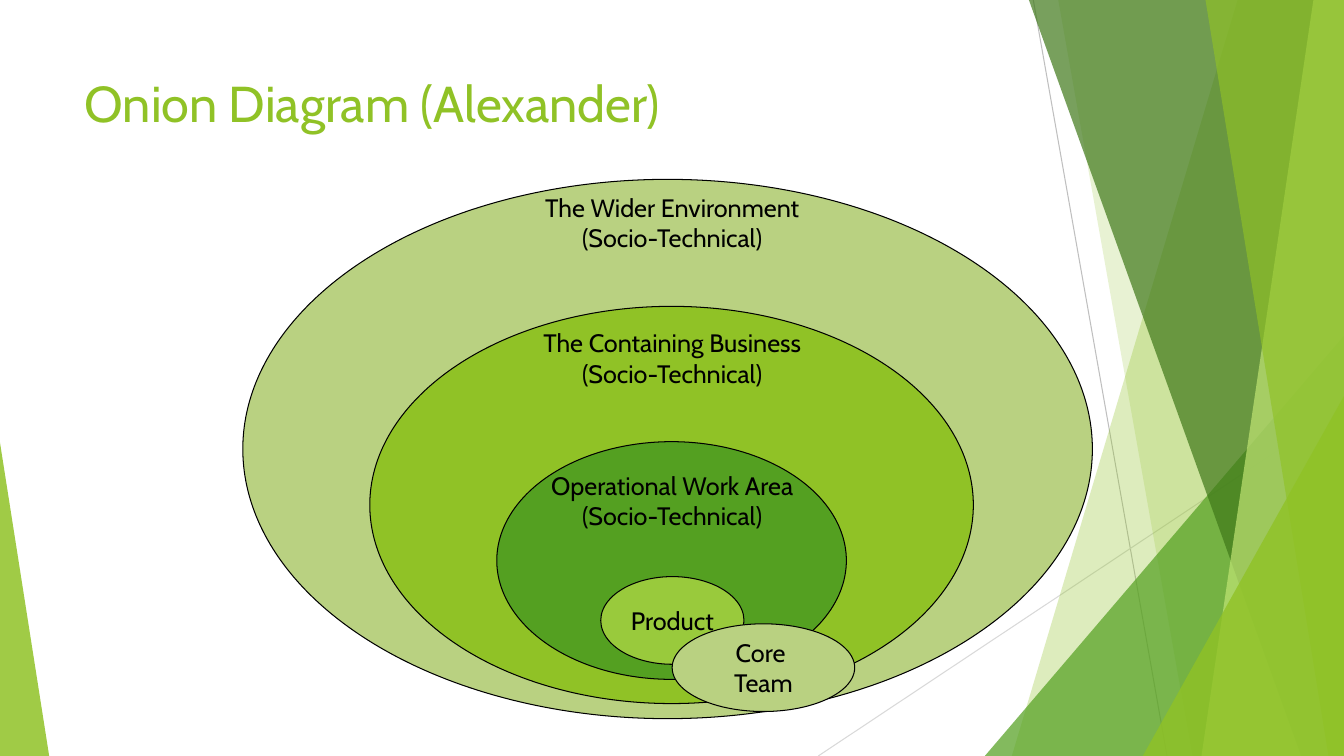
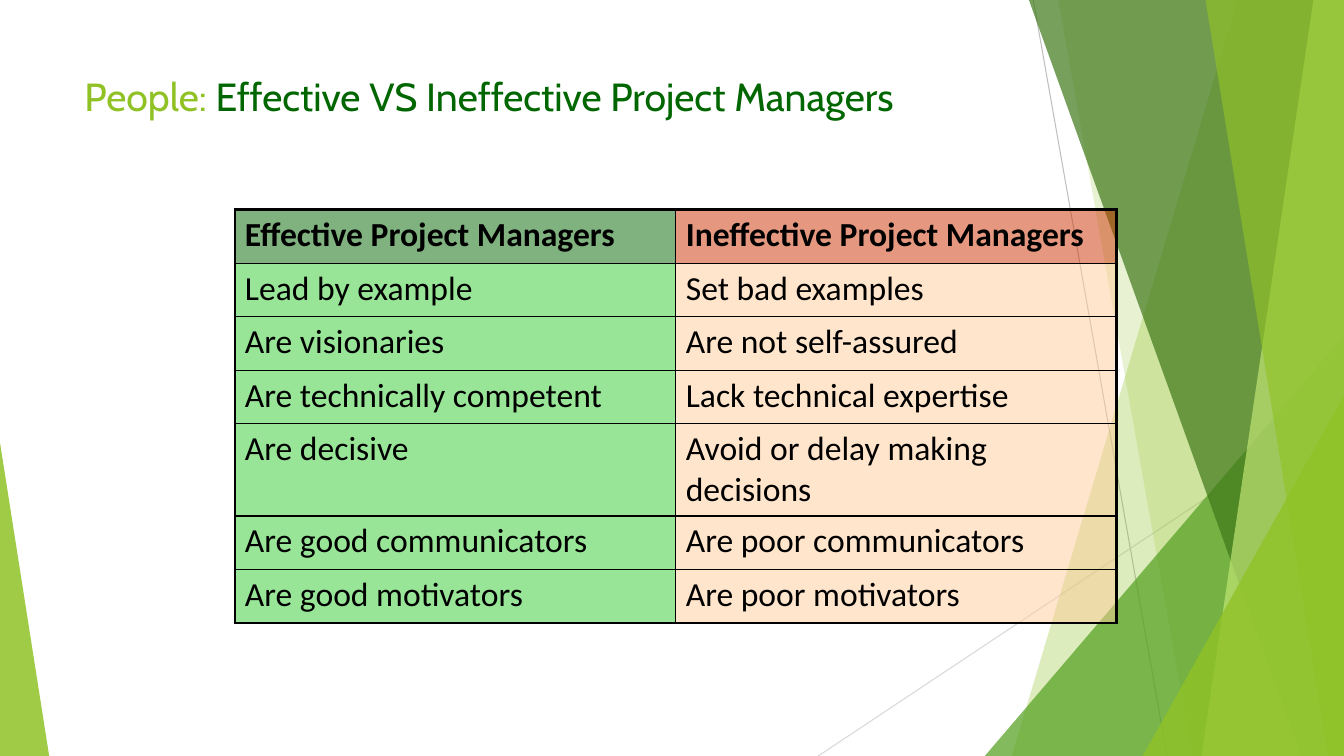
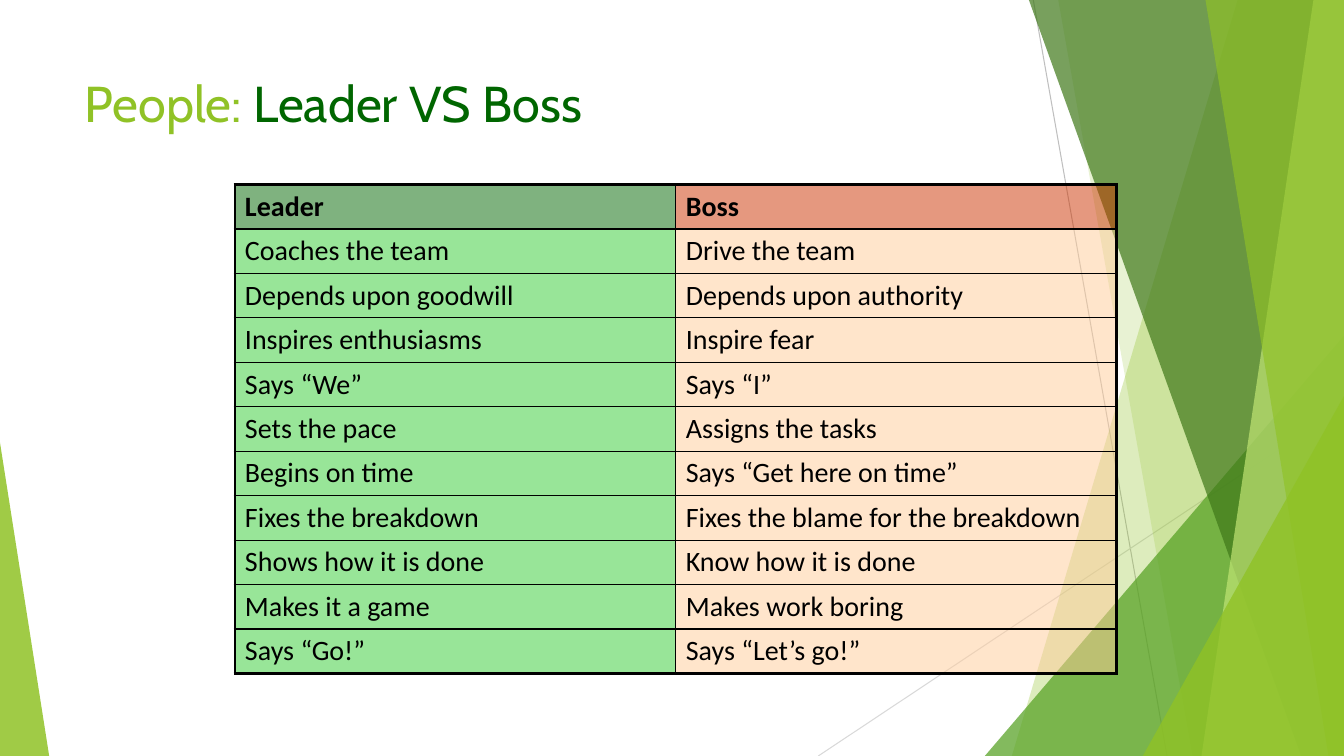
"""Build three slides on project stakeholders and people management."""
from lxml.etree import SubElement
from pptx import Presentation
from pptx.dml.color import RGBColor
from pptx.enum.shapes import MSO_CONNECTOR, MSO_SHAPE
from pptx.enum.text import MSO_ANCHOR, PP_ALIGN
from pptx.oxml.ns import qn
from pptx.util import Cm, Pt

BLACK = RGBColor(0x00, 0x00, 0x00)
LIME = RGBColor(0x90, 0xC2, 0x26)
GREEN = RGBColor(0x54, 0xA0, 0x21)
FOREST = RGBColor(0x3F, 0x78, 0x19)
PALE_LIME = RGBColor(0xC0, 0xE4, 0x74)
SAGE = RGBColor(0xB9, 0xD1, 0x81)
LEAF = RGBColor(0x99, 0xCA, 0x3C)
DARK_GREEN = RGBColor(0x00, 0x66, 0x00)
BRIGHT_GREEN = RGBColor(0x33, 0xCC, 0x33)
RUST = RGBColor(0xCC, 0x33, 0x00)
PEACH = RGBColor(0xFF, 0xCC, 0x99)
GREY = RGBColor(0xBF, 0xBF, 0xBF)
LIGHT_GREY = RGBColor(0xD9, 0xD9, 0xD9)

HEADING_FONT = "Cabin"
TABLE_FONT = "Calibri"
WIDTH, HEIGHT = 33.87, 19.05

BACKDROP_LINES = [
    ((26.04, 0), (29.41, HEIGHT), GREY),
    ((WIDTH, 10.24), (20.62, HEIGHT), LIGHT_GREY),
]
BACKDROP_PARTS = [
    ("band", (31.19, 25.5), LIME, 30),
    ("band", (26.67, 30.05), LIME, 20),
    ("triangle", (24.82, 8.46, 9.05, 1), GREEN, 72),
    ("band", (25.93, 32.79), FOREST, 70),
    ("band", (33.1, 30.28), PALE_LIME, 70),
    ("band", (30.38, 33.48), LIME, 65),
    ("triangle", (28.8, 9.98, 5.07, 1), LIME, 80),
    ("triangle", (0, 11.15, 1.24, 0), LIME, 85),
]

ONION_TITLE = [("Onion Diagram (Alexander)", LIME)]
ONION_LAYERS = [
    ((6.12, 4.52, 21.41, 13.59), SAGE, ""),
    ((9.32, 7.72, 15.21, 10.01), LIME, ""),
    ((12.52, 11.13, 8.81, 5.99), GREEN, ""),
    ((15.14, 14.53, 3.61, 2.21), LEAF, "Product"),
    ((16.94, 15.72, 4.6, 2.21), SAGE, "Core \nTeam"),
]
ONION_LABELS = [
    (11.73, "Operational Work Area\n(Socio-Technical)"),
    (8.13, "The Containing Business\n(Socio-Technical)"),
    (4.72, "The Wider Environment\n(Socio-Technical)"),
]
ONION_CENTRE, LABEL_WIDTH, LABEL_HEIGHT = 16.94, 7.6, 1.78

COMPARISONS = [
    {
        "title": [("People: ", LIME), ("Effective VS Ineffective Project Managers", DARK_GREEN)],
        "title_size": 28,
        "top": 5.28,
        "text_size": 24,
        "heights": [1.35] * 4 + [2.32] + [1.35] * 2,
        "rows": [
            ("Effective Project Managers", "Ineffective Project Managers"),
            ("Lead by example", "Set bad examples"),
            ("Are visionaries", "Are not self-assured"),
            ("Are technically competent", "Lack technical expertise"),
            ("Are decisive", "Avoid or delay making decisions"),
            ("Are good communicators", "Are poor communicators"),
            ("Are good motivators", "Are poor motivators"),
        ],
    },
    {
        "title": [("People: ", LIME), ("Leader VS Boss", DARK_GREEN)],
        "title_size": 36,
        "top": 4.65,
        "text_size": 20,
        "heights": [1.12] * 11,
        "rows": [
            ("Leader", "Boss"),
            ("Coaches the team", "Drive the team"),
            ("Depends upon goodwill", "Depends upon authority"),
            ("Inspires enthusiasms", "Inspire fear"),
            ("Says “We”", "Says “I”"),
            ("Sets the pace", "Assigns the tasks"),
            ("Begins on time", "Says “Get here on time”"),
            ("Fixes the breakdown", "Fixes the blame for the breakdown"),
            ("Shows how it is done", "Know how it is done"),
            ("Makes it a game", "Makes work boring"),
            ("Says “Go!”", "Says “Let’s go!”"),
        ],
    },
]
TABLE_LEFT, COLUMN_WIDTH = 5.92, 11.11
HEADER_FILLS = (DARK_GREEN, RUST)
BODY_FILLS = (BRIGHT_GREEN, PEACH)


def lengths(*values):
    return [Cm(value) for value in values]


def fill_solid(fill, color, opacity=100):
    fill.solid()
    fill.fore_color.rgb = color
    if opacity < 100:
        for color_element in fill._xPr.iter(qn("a:srgbClr")):
            SubElement(color_element, qn("a:alpha"), val=str(opacity * 1000))


def style_font(font, name, size, color, bold=False):
    font.name = name
    font.size = Pt(size)
    font.color.rgb = color
    font.bold = bold


def draw_line(slide, start, end, color):
    line = slide.shapes.add_connector(MSO_CONNECTOR.STRAIGHT, *lengths(*start, *end))
    line.line.color.rgb = color
    line.line.width = Pt(0.75)
    SubElement(line.element.spPr, qn("a:effectLst"))


def draw_band(slide, top_x, bottom_x):
    builder = slide.shapes.build_freeform(Cm(top_x), 0)
    corners = [(WIDTH, 0), (WIDTH, HEIGHT), (bottom_x, HEIGHT)]
    builder.add_line_segments([lengths(*corner) for corner in corners], close=True)
    return builder.convert_to_shape()


def draw_triangle(slide, left, top, width, apex):
    frame = lengths(left, top, width, HEIGHT - top)
    triangle = slide.shapes.add_shape(MSO_SHAPE.ISOSCELES_TRIANGLE, *frame)
    triangle.adjustments[0] = apex
    return triangle


def move_backdrop_to_layout(slide):
    layout = slide.slide_layout
    for placeholder in list(layout.placeholders):
        layout.shapes.element.remove(placeholder.element)
    for start, end, color in BACKDROP_LINES:
        draw_line(slide, start, end, color)
    draw = {"band": draw_band, "triangle": draw_triangle}
    for kind, geometry, color, opacity in BACKDROP_PARTS:
        shape = draw[kind](slide, *geometry)
        shape.shadow.inherit = False
        shape.line.fill.background()
        fill_solid(shape.fill, color, opacity)
    for shape in list(slide.shapes):
        layout.shapes.element.append(shape.element)


def add_title(slide, parts, size):
    text_frame = slide.shapes.add_textbox(*lengths(1.88, 1.7, 23.88, 3.66)).text_frame
    text_frame.word_wrap = True
    for text, color in parts:
        run = text_frame.paragraphs[0].add_run()
        run.text = text
        style_font(run.font, HEADING_FONT, size, color)


def set_centred_text(shape, text):
    shape.text_frame.text = text
    shape.text_frame.word_wrap = False
    for paragraph in shape.text_frame.paragraphs:
        paragraph.alignment = PP_ALIGN.CENTER
        for run in paragraph.runs:
            style_font(run.font, HEADING_FONT, 18, BLACK)


def add_onion(slide):
    for frame, color, text in ONION_LAYERS:
        layer = slide.shapes.add_shape(MSO_SHAPE.OVAL, *lengths(*frame))
        layer.shadow.inherit = False
        fill_solid(layer.fill, color)
        layer.line.color.rgb = BLACK
        layer.line.width = Pt(0.75)
        if text:
            layer.text_frame.vertical_anchor = MSO_ANCHOR.MIDDLE
            set_centred_text(layer, text)
    left = ONION_CENTRE - LABEL_WIDTH / 2
    for top, text in ONION_LABELS:
        label = slide.shapes.add_textbox(*lengths(left, top, LABEL_WIDTH, LABEL_HEIGHT))
        set_centred_text(label, text)


def add_borders(cell, outer_sides):
    properties = cell._tc.get_or_add_tcPr()
    for side in "LRTB":
        width = Pt(2.25 if side in outer_sides else 1)
        border = SubElement(properties, qn(f"a:ln{side}"), w=str(width))
        SubElement(SubElement(border, qn("a:solidFill")), qn("a:srgbClr"), val=str(BLACK))


def add_comparison(slide, top, text_size, heights, rows):
    frame = lengths(TABLE_LEFT, top, 2 * COLUMN_WIDTH, sum(heights))
    table = slide.shapes.add_table(len(rows), 2, *frame).table
    table.first_row = table.horz_banding = False
    for column in table.columns:
        column.width = Cm(COLUMN_WIDTH)
    for row_index, texts in enumerate(rows):
        table.rows[row_index].height = Cm(heights[row_index])
        is_header = row_index == 0
        row_edge = "T" if is_header else "B" if row_index == len(rows) - 1 else ""
        fills = HEADER_FILLS if is_header else BODY_FILLS
        for column_index, text in enumerate(texts):
            cell = table.cell(row_index, column_index)
            add_borders(cell, "LR"[column_index] + row_edge)
            fill_solid(cell.fill, fills[column_index], 50)
            cell.text_frame.text = text
            font = cell.text_frame.paragraphs[0].runs[0].font
            style_font(font, TABLE_FONT, text_size, BLACK, is_header)


def main():
    presentation = Presentation()
    presentation.slide_width, presentation.slide_height = lengths(WIDTH, HEIGHT)
    blank = presentation.slide_layouts[6]
    onion_slide = presentation.slides.add_slide(blank)
    move_backdrop_to_layout(onion_slide)
    add_title(onion_slide, ONION_TITLE, 36)
    add_onion(onion_slide)
    for comparison in COMPARISONS:
        slide = presentation.slides.add_slide(blank)
        add_title(slide, comparison["title"], comparison["title_size"])
        add_comparison(slide, comparison["top"], comparison["text_size"],
                       comparison["heights"], comparison["rows"])
    presentation.save("out.pptx")


if __name__ == "__main__":
    main()
